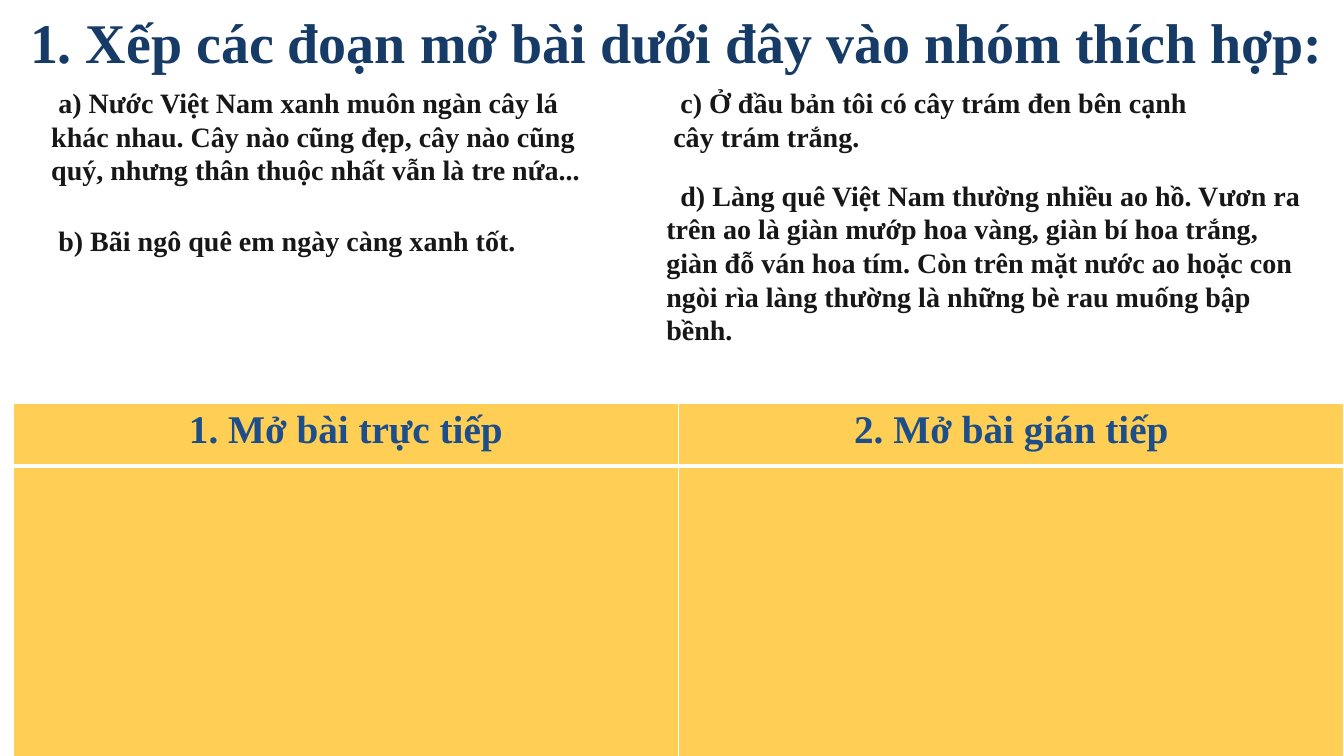
from lxml.etree import fromstring
from pptx import Presentation
from pptx.dml.color import RGBColor
from pptx.enum.text import MSO_AUTO_SIZE, PP_ALIGN
from pptx.oxml.ns import nsdecls
from pptx.util import Inches, Pt

NAVY = RGBColor(0x16, 0x3B, 0x67)
BLUE = RGBColor(0x1D, 0x4E, 0x89)
INK = RGBColor(0x18, 0x17, 0x17)
YELLOW = RGBColor(0xFF, 0xCE, 0x54)
WHITE = RGBColor(0xFF, 0xFF, 0xFF)


def write(p, text, size, color):
    r = p.add_run()
    r.text = text
    for name, value in {"name": "Times New Roman", "size": Pt(size), "bold": True}.items():
        setattr(r.font, name, value)
    r.font.color.rgb = color


def set_borders(cell, widths):
    tcPr = cell._tc.get_or_add_tcPr()
    for i, (side, width) in enumerate(widths.items()):
        tcPr.insert(i, fromstring(
            f'<a:ln{side} {nsdecls("a")} w="{Pt(width)}"><a:solidFill>'
            f'<a:srgbClr val="{WHITE}"/></a:solidFill></a:ln{side}>'))


prs = Presentation()
prs.slide_width, prs.slide_height = Inches(13.33), Inches(7.5)
s = prs.slides.add_slide(prs.slide_layouts[6])

headings = ["1. Mở bài trực tiếp", "2. Mở bài gián tiếp"]
table = s.shapes.add_table(2, 2, Inches(0.13), Inches(4), Inches(13.2), Inches(4.06)).table
for row, height in zip(table.rows, [0.62, 3.44]):
    row.height = Inches(height)
for col, heading in enumerate(headings):
    p = table.cell(0, col).text_frame.paragraphs[0]
    p.alignment = PP_ALIGN.CENTER
    write(p, heading, 28, BLUE)
    for row, (top, bottom) in enumerate([(1, 3), (3, 1)]):
        cell = table.cell(row, col)
        cell.fill.solid()
        cell.fill.fore_color.rgb = YELLOW
        set_borders(cell, {"L": 1, "R": 1, "T": top, "B": bottom})

texts = [
    (0, 0.03, 13.33, 0.77, 0.2, 0, 40, NAVY,
     "1. Xếp các đoạn mở bài dưới đây vào nhóm thích hợp:"),
    (0.41, 0.8, 5.7, 1.11, 0, 0.07, 20, INK,
     "a) Nước Việt Nam xanh muôn ngàn cây lá khác nhau. Cây nào cũng đẹp, "
     "cây nào cũng quý, nhưng thân thuộc nhất vẫn là tre nứa..."),
    (0.41, 2.17, 5.1, 0.44, 0, 0.07, 20, INK,
     "b) Bãi ngô quê em ngày càng xanh tốt."),
    (6.58, 0.8, 5.7, 0.77, 0, 0.07, 20, INK,
     "c) Ở đầu bản tôi có cây trám đen bên cạnh cây trám trắng."),
    (6.51, 1.72, 6.55, 1.78, 0, 0.14, 20, INK,
     "d) Làng quê Việt Nam thường nhiều ao hồ. Vươn ra trên ao là giàn mướp "
     "hoa vàng, giàn bí hoa trắng, giàn đỗ ván hoa tím. Còn trên mặt nước ao "
     "hoặc con ngòi rìa làng thường là những bè rau muống bập bềnh."),
]
for left, top, width, height, margin, indent, size, color, text in texts:
    tf = s.shapes.add_textbox(Inches(left), Inches(top), Inches(width), Inches(height)).text_frame
    for name, value in {"word_wrap": True, "auto_size": MSO_AUTO_SIZE.SHAPE_TO_FIT_TEXT}.items():
        setattr(tf, name, value)
    p = tf.paragraphs[0]
    pPr = p._p.get_or_add_pPr()
    for name, value in {"marL": margin, "indent": indent}.items():
        pPr.set(name, str(Inches(value)))
    write(p, text, size, color)

prs.save("out.pptx")
